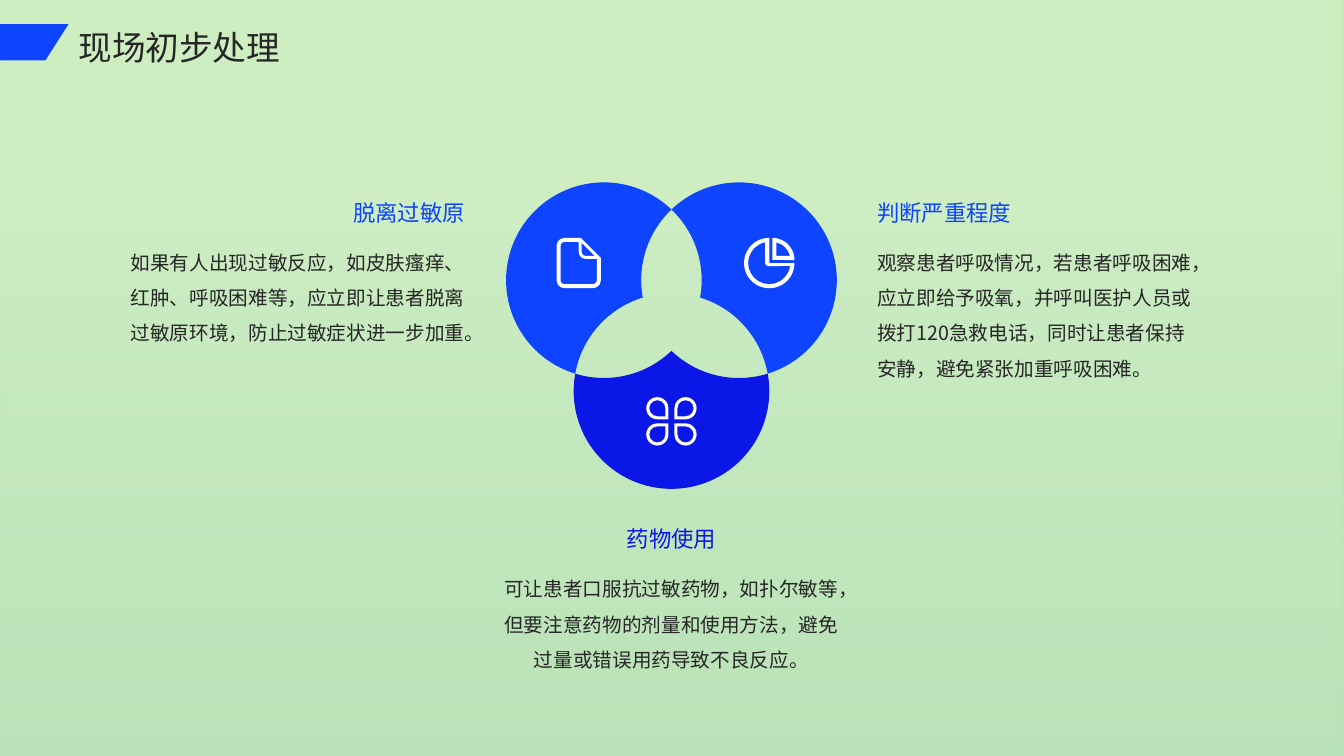
import dataclasses
import itertools
import math
import typing

import pptx
import pptx.dml.color
import pptx.enum.lang
import pptx.enum.shapes
import pptx.enum.text
import pptx.oxml
import pptx.oxml.ns
import pptx.util

Inches = pptx.util.Inches
Align = pptx.enum.text.PP_ALIGN
Anchor = pptx.enum.text.MSO_ANCHOR
qn = pptx.oxml.ns.qn


@dataclasses.dataclass(frozen=True)
class Theme:
    font: str = "Noto Sans CJK SC"
    background: str = "B4E5A2"
    tint: str = "CFDAFF"
    white: str = "FFFFFF"
    ink: str = "262626"
    blue: str = "0E44FE"
    deep_blue: str = "0A17E7"
    title_size: int = 24
    heading_size: int = 16
    body_size: int = 14


class Step(typing.NamedTuple):
    heading: str
    body: str
    left: float
    top: float
    width: float
    align: Align
    color: str


class Node(typing.NamedTuple):
    """An outline point, reached by a line or, with a radius, by an arc."""
    x: float
    y: float
    radius: float = 0
    start: float = 0
    sweep: float = 0


Contour = list[Node]
THEME = Theme()
STEPS = [
    Step("药物使用",
         "可让患者口服抗过敏药物，如扑尔敏等，但要注意药物的剂量和使用方法，避免过量或错误用药导致不良反应。",
         4.93, 4.85, 3.46, Align.CENTER, THEME.deep_blue),
    Step("脱离过敏原",
         "如果有人出现过敏反应，如皮肤瘙痒、红肿、呼吸困难等，应立即让患者脱离过敏原环境，防止过敏症状进一步加重。",
         1.15, 1.61, 3.46, Align.RIGHT, THEME.blue),
    Step("判断严重程度",
         "观察患者呼吸情况，若患者呼吸困难，应立即给予吸氧，并呼叫医护人员或拨打120急救电话，同时让患者保持安静，避免紧张加重呼吸困难。",
         8.7, 1.61, 3.13, Align.LEFT, THEME.blue),
]


def rgb(color: str) -> pptx.dml.color.RGBColor:
    return pptx.dml.color.RGBColor.from_string(color)


def drawing_element(tag: str, attributes: str) -> typing.Any:
    return pptx.oxml.parse_xml(f'<a:{tag} {pptx.oxml.ns.nsdecls("a")} {attributes}/>')


def arc(x: float, y: float, radius: float, start: float, end: float) -> Contour:
    """Arc split at quarter turns; degrees run clockwise from the right."""
    low, high = sorted((start, end))
    cuts = [90 * k for k in range(math.floor(low / 90) + 1, math.ceil(high / 90))]
    stops = sorted([low, *cuts, high], reverse=end < start)

    def spot(angle: float) -> tuple[float, float]:
        turn = math.radians(angle)
        return x + radius * math.cos(turn), y + radius * math.sin(turn)

    return [Node(*spot(start))] + [
        Node(*spot(b), radius, a, b - a) for a, b in itertools.pairwise(stops)]


def flip(contour: Contour, axis: float) -> Contour:
    return [Node(2 * axis - n.x, n.y, n.radius, 180 - n.start, -n.sweep) for n in contour]


def flip_down(contour: Contour, axis: float) -> Contour:
    return [Node(n.x, 2 * axis - n.y, n.radius, -n.start, -n.sweep) for n in contour]


def add_outline(page: typing.Any, contours: list[Contour], color: str) -> None:
    paths = [[(Inches(n.x), Inches(n.y)) for n in contour] for contour in contours]
    builder = page.shapes.build_freeform(*paths[0][0], scale=1.0)
    builder.add_line_segments(paths[0][1:], close=True)
    for points in paths[1:]:
        builder.move_to(*points[0])
        builder.add_line_segments(points[1:], close=True)
    shape = builder.convert_to_shape()
    shape.shadow.inherit = False
    shape.fill.solid()
    shape.fill.fore_color.rgb = rgb(color)
    shape.line.fill.background()
    # Turn the straight segments of round parts into arcs
    segments = list(shape._element.iter(qn("a:moveTo"), qn("a:lnTo")))
    for segment, node in zip(segments, itertools.chain(*contours)):
        if node.radius:
            size = Inches(node.radius)
            start, sweep = round(node.start % 360 * 60000), round(node.sweep * 60000)
            segment.getparent().replace(segment, drawing_element(
                "arcTo", f'wR="{size}" hR="{size}" stAng="{start}" swAng="{sweep}"'))


def add_text(page: typing.Any, text: str, area: tuple[float, float, float, float], size: int,
             color: str, spacing: float, align: Align = Align.LEFT,
             anchor: Anchor = Anchor.TOP, inset: bool = False) -> None:
    box = page.shapes.add_textbox(*map(Inches, area))
    frame = box.text_frame
    frame.word_wrap = True
    frame.vertical_anchor = anchor
    if inset:
        frame.auto_size = pptx.enum.text.MSO_AUTO_SIZE.SHAPE_TO_FIT_TEXT
    else:
        frame.margin_left = frame.margin_right = frame.margin_top = frame.margin_bottom = 0
    para = frame.paragraphs[0]
    para.alignment, para.line_spacing = align, spacing
    span = para.add_run()
    span.text = text
    span.font.size = pptx.util.Pt(size)
    span.font.name = THEME.font
    span.font.language_id = pptx.enum.lang.MSO_LANGUAGE_ID.SIMPLIFIED_CHINESE
    span.font.color.rgb = rgb(color)
    span.font._element.append(drawing_element("ea", f'typeface="{THEME.font}"'))


def add_backdrop(page: typing.Any, width: int, height: int) -> None:
    page.background.fill.solid()
    page.background.fill.fore_color.rgb = rgb(THEME.background)
    veil = page.shapes.add_shape(pptx.enum.shapes.MSO_SHAPE.RECTANGLE, 0, 0, width, height)
    veil.shadow.inherit = False
    veil.line.fill.background()
    veil.fill.gradient()
    veil.fill.gradient_angle = 90
    settings = [(0, THEME.tint, 23), (0.76, THEME.white, 35)]
    for stop, (position, color, opacity) in zip(veil.fill.gradient_stops, settings):
        stop.position = position
        stop.color.rgb = rgb(color)
        stop._gs.find(qn("a:srgbClr")).append(drawing_element("alpha", f'val="{opacity * 1000}"'))


def add_petals(page: typing.Any) -> None:
    """Three overlapping circles with their shared areas left open."""
    left, right, bottom = (5.99, 2.78, 0.97), (7.33, 2.78, 0.97), (6.66, 3.88, 0.97)
    side = arc(*right, 226.3, 169.8) + arc(*bottom, 253.2, 190.2) + arc(*left, 106.8, 313.7)
    base = arc(*right, 133.7, 73.2) + arc(*bottom, -10.2, 190.2) + arc(*left, 106.8, 46.3)
    add_outline(page, [side], THEME.blue)
    add_outline(page, [flip(side, 6.66)], THEME.blue)
    add_outline(page, [base], THEME.deep_blue)


def pie_icon() -> list[Contour]:
    return [arc(7.63, 2.61, 0.25, 0, 270) + [Node(7.63, 2.61)],
            arc(7.63, 2.61, 0.21, 8, 259) + arc(7.62, 2.61, 0.03, 180, 90),
            arc(7.66, 2.58, 0.22, 270, 360) + [Node(7.66, 2.58)],
            arc(7.66, 2.58, 0.18, 283, 347) + [Node(7.7, 2.54)]]


def document_icon() -> list[Contour]:
    def corners(radius: float) -> Contour:
        return (arc(5.88, 2.78, radius, 0, 90) + arc(5.6, 2.78, radius, 90, 180)
                + arc(5.6, 2.44, radius, 180, 270))

    return [corners(0.08) + [Node(5.76, 2.36), Node(5.96, 2.56)],
            corners(0.04) + [Node(5.74, 2.4)] + arc(5.81, 2.5, 0.07, 180, 90) + [Node(5.92, 2.57)],
            [Node(5.77, 2.41), Node(5.9, 2.54)] + arc(5.81, 2.5, 0.04, 90, 180)]


def clover_icon() -> list[Contour]:
    x, y = 6.52, 4.05
    leaf = [arc(x, y, r, 90, 360) + [Node(x + r, y + r)] for r in (0.11, 0.08)]
    upper = leaf + [flip(contour, 6.66) for contour in leaf]
    return upper + [flip_down(contour, 4.18) for contour in upper]


def main() -> None:
    deck = pptx.Presentation()
    deck.slide_width, deck.slide_height = Inches(13.33), Inches(7.5)
    page = deck.slides.add_slide(deck.slide_layouts[6])
    add_backdrop(page, deck.slide_width, deck.slide_height)
    add_petals(page)
    # Step texts
    for step in STEPS:
        add_text(page, step.body, (step.left, step.top + 0.76, step.width, 1.31),
                 THEME.body_size, THEME.ink, 1.5, step.align)
        add_text(page, step.heading, (step.left, step.top, step.width, 0.63),
                 THEME.heading_size, step.color, 1.3, step.align, Anchor.BOTTOM)
    # Icons
    for icon in (pie_icon(), document_icon(), clover_icon()):
        add_outline(page, icon, THEME.white)
    # Title with its marker
    marker = [Node(0, 0.24), Node(0.68, 0.24), Node(0.45, 0.6), Node(0, 0.6)]
    add_outline(page, [marker], THEME.blue)
    add_text(page, "现场初步处理", (0.68, 0.18, 11.71, 0.46),
             THEME.title_size, THEME.ink, 1.1, inset=True)
    deck.save("out.pptx")


if __name__ == "__main__":
    main()
